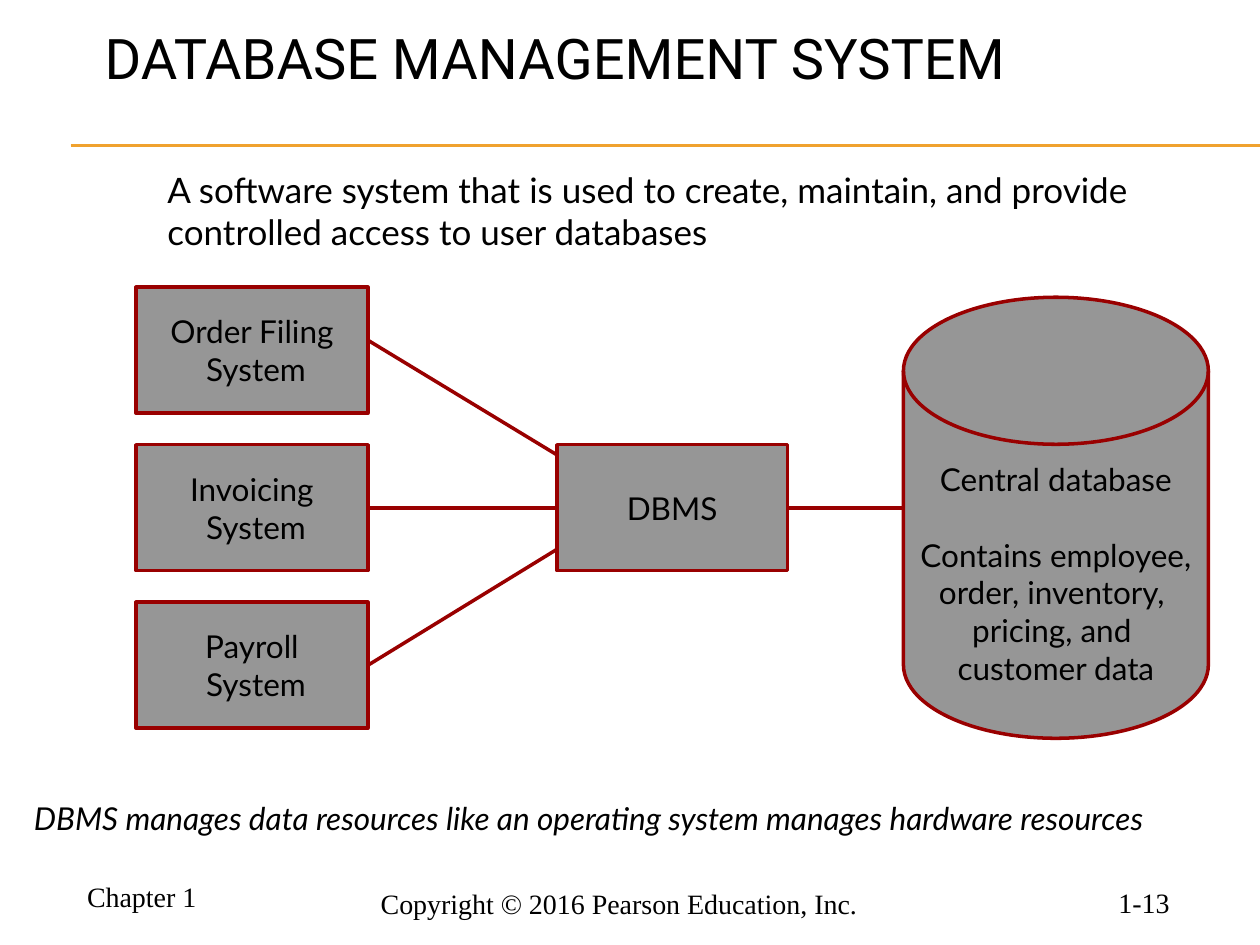
"""Build the database management system slide."""
from lxml import etree
from pptx import Presentation
from pptx.dml.color import RGBColor
from pptx.enum.shapes import MSO_CONNECTOR, MSO_SHAPE
from pptx.enum.text import MSO_ANCHOR, PP_ALIGN
from pptx.oxml.ns import qn
from pptx.util import Inches, Pt

BLACK = RGBColor(0x00, 0x00, 0x00)
GRAY = RGBColor(0x96, 0x96, 0x96)
RED = RGBColor(0x99, 0x00, 0x00)
GOLD = RGBColor(0xF0, 0xA2, 0x2E)


def write(sp, lines, size, font="Lato", align=PP_ALIGN.LEFT, anchor=MSO_ANCHOR.TOP, wrap=True):
    tf = sp.text_frame
    tf.word_wrap = wrap
    tf.vertical_anchor = anchor
    tf.text = "\n".join(lines)
    for p in tf.paragraphs:
        p.alignment = align
        p.font.size = Pt(size)
        p.font.name = font
        p.font.color.rgb = BLACK
    return tf


def line(x1, y1, x2, y2, color, width):
    ends = [Inches(v) for v in (x1, y1, x2, y2)]
    c = s.shapes.add_connector(MSO_CONNECTOR.STRAIGHT, *ends)
    c.line.color.rgb = color
    c.line.width = Pt(width)
    etree.SubElement(c._element.spPr, qn("a:effectLst"))
    return c


prs = Presentation()
prs.slide_width, prs.slide_height = Inches(10), Inches(7.5)
s = prs.slides.add_slide(prs.slide_layouts[6])

for y in (1.15, 1.16):
    line(0.56, y, 10, y, GOLD, 0.75)

footers = [
    ("Chapter 1", 0.53, 6.9, 1.19, 0.4),
    ("Copyright © 2016 Pearson Education, Inc. ", 1.45, 6.83, 6.98, 0.52),
    ("1-13", 8.55, 6.94, 1.06, 0.4),
]
for text, *box in footers:
    sp = s.shapes.add_textbox(*[Inches(v) for v in box])
    write(sp, [text], 16, "Times New Roman", PP_ALIGN.CENTER, MSO_ANCHOR.BOTTOM)

title = s.shapes.add_textbox(Inches(0.78), Inches(0.17), Inches(8.44), Inches(0.77))
tf = write(title, ["DATABASE MANAGEMENT SYSTEM"], 32, "Roboto")
tf.margin_left = tf.margin_right = Inches(0.05)
tf.margin_top = tf.margin_bottom = Inches(0.02)

note = s.shapes.add_textbox(Inches(0.17), Inches(6.29), Inches(9.77), Inches(0.4))
tf = write(note, ["DBMS manages data resources like an operating system manages hardware resources"], 18)
tf.paragraphs[0].font.italic = True

definition = s.shapes.add_textbox(Inches(1.23), Inches(1.29), Inches(8.12), Inches(1.5))
write(definition, ["A software system that is used to create, maintain, and provide "
                   "controlled access to user databases"], 20)

nodes = [
    (MSO_SHAPE.RECTANGLE, 1.08, 2.28, 1.84, 1, ["Order Filing", " System"]),
    (MSO_SHAPE.RECTANGLE, 1.08, 3.53, 1.84, 1, ["Invoicing", " System"]),
    (MSO_SHAPE.RECTANGLE, 1.08, 4.78, 1.84, 1, ["Payroll", " System"]),
    (MSO_SHAPE.RECTANGLE, 4.42, 3.53, 1.83, 1, ["DBMS"]),
    (MSO_SHAPE.FLOWCHART_MAGNETIC_DISK, 7.17, 2.36, 2.42, 3.5,
     ["Central database", "Contains employee,", "order, inventory, ", "pricing, and ", "customer data"]),
]
shapes = []
for kind, x, y, w, h, lines in nodes:
    sp = s.shapes.add_shape(kind, Inches(x), Inches(y), Inches(w), Inches(h))
    sp.shadow.inherit = False
    sp.fill.solid()
    sp.fill.fore_color.rgb = GRAY
    sp.line.color.rgb = RED
    sp.line.width = Pt(2)
    write(sp, lines, 18, align=PP_ALIGN.CENTER, anchor=MSO_ANCHOR.MIDDLE, wrap=False)
    shapes.append(sp)
order, invoicing, payroll, dbms, disk = shapes

tf = disk.text_frame
tf.margin_top = Inches(0.35)
tf.paragraphs[1].space_before = Pt(21.6)

line(2.92, 2.7, 4.42, 3.61, RED, 2)
c = line(2.92, 4.03, 4.42, 4.03, RED, 2)
c.begin_connect(invoicing, 3)
c.end_connect(dbms, 1)
line(2.92, 5.28, 4.42, 4.36, RED, 2).begin_connect(payroll, 3)
line(6.25, 4.03, 7.17, 4.03, RED, 2).begin_connect(dbms, 3)

prs.save("out.pptx")
